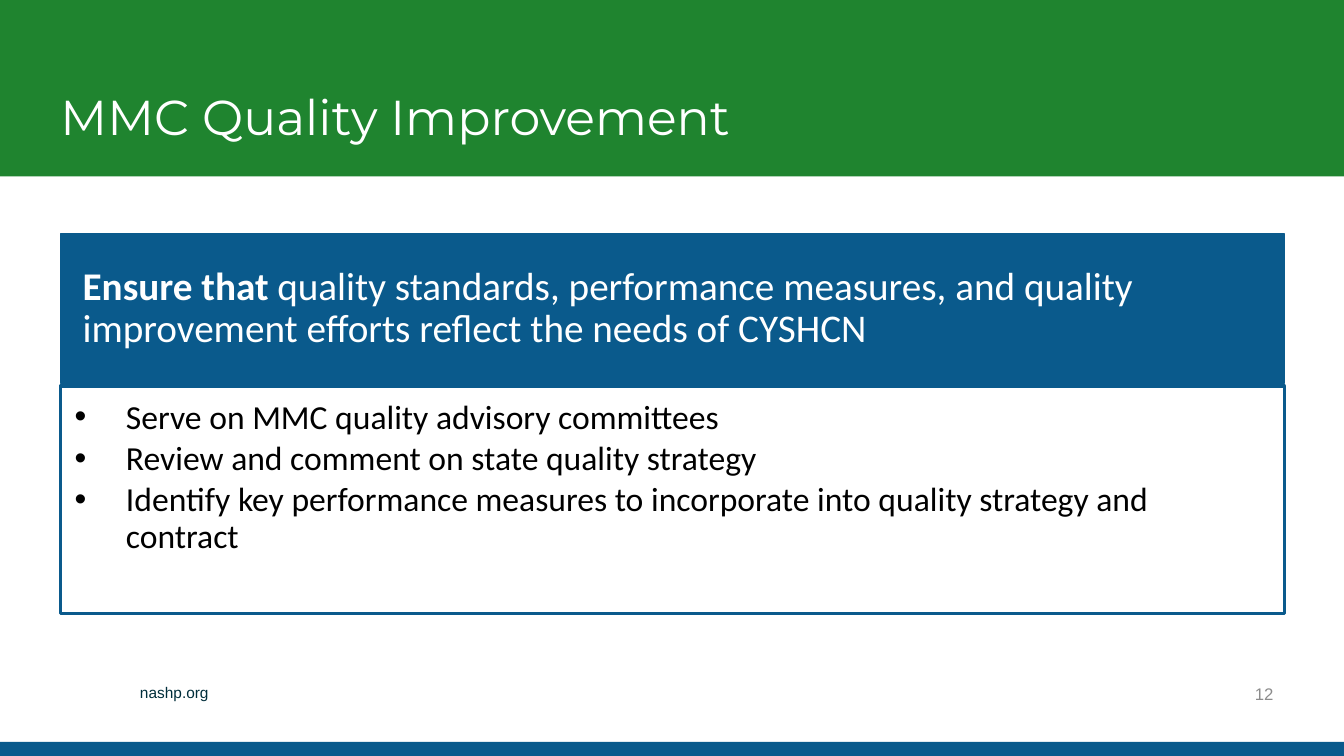
from lxml import etree
from pptx import Presentation
from pptx.dml.color import RGBColor
from pptx.enum.shapes import MSO_SHAPE as Shape
from pptx.enum.text import MSO_ANCHOR as Anchor, PP_ALIGN as Align
from pptx.oxml.ns import qn
from pptx.util import Inches, Pt

COLORS = {
    "green": "1F842F",
    "blue": "0A5A8C",
    "white": "FFFFFF",
    "black": "000000",
    "site": "002E3B",
    "number": "8C8C8C",
}
SLIDE_WIDTH, SLIDE_HEIGHT = 13.33, 7.5
MARGIN, CONTENT_WIDTH = 0.6, 12.14
BULLET_INDENT = 0.51
ACTIONS = [
    "Serve on MMC quality advisory committees",
    "Review and comment on state quality strategy",
    "Identify key performance measures to incorporate into quality strategy and contract",
]


def color(name):
    return RGBColor.from_string(COLORS[name])


def add_panel(slide, box, fill=None, line=None, line_width=1):
    panel = slide.shapes.add_shape(Shape.RECTANGLE, *map(Inches, box))
    panel.shadow.inherit = False
    if fill:
        panel.fill.solid()
        panel.fill.fore_color.rgb = color(fill)
    else:
        panel.fill.background()
    if line:
        panel.line.color.rgb = color(line)
        panel.line.width = Pt(line_width)
    else:
        panel.line.fill.background()
    return panel


def set_frame(shape, anchor=Anchor.TOP, insets=(0.1, 0.05, 0.1, 0.05)):
    """Prepare a wrapped text frame; insets run left, top, right, bottom."""
    frame = shape.text_frame
    frame.word_wrap = True
    frame.vertical_anchor = anchor
    (frame.margin_left, frame.margin_top,
     frame.margin_right, frame.margin_bottom) = map(Inches, insets)
    return frame


def add_run(paragraph, text, size, tint, font="Calibri", bold=False):
    run = paragraph.add_run()
    run.text = text
    run.font.size = Pt(size)
    run.font.name = font
    run.font.bold = bold
    run.font.color.rgb = color(tint)


def add_bullet(paragraph):
    properties = paragraph._p.get_or_add_pPr()
    properties.set("marL", str(Inches(BULLET_INDENT)))
    properties.set("indent", str(-Inches(BULLET_INDENT)))
    etree.SubElement(properties, qn("a:buFont")).set("typeface", "Arial")
    etree.SubElement(properties, qn("a:buChar")).set("char", "•")


def add_header(slide, box):
    left, top, width, height = box
    add_panel(slide, box, fill="green")
    title_box = (left + MARGIN, top + 0.22, CONTENT_WIDTH, height - 0.47)
    title = slide.shapes.add_textbox(*map(Inches, title_box))
    paragraph = set_frame(title, Anchor.BOTTOM, (0, 0.05, 0.1, 0.05)).paragraphs[0]
    paragraph.line_spacing = 0.9
    add_run(paragraph, "MMC Quality Improvement", 35, "white", "Montserrat")


def add_recommendation(slide, box):
    """Place the goal banner above the outlined list of actions."""
    left, top, width, height = box
    goal_height, gap = 1.48, 0.03
    goal = add_panel(slide, (left, top, width, goal_height), "blue", "blue")
    paragraph = set_frame(goal, Anchor.MIDDLE, (0.22, 0.12, 0.22, 0.12)).paragraphs[0]
    paragraph.alignment = Align.LEFT
    paragraph.line_spacing = 0.9
    add_run(paragraph, "Ensure that ", 28, "white", bold=True)
    add_run(paragraph, "quality standards, performance measures, and quality "
            "improvement efforts reflect the needs of CYSHCN", 28, "white")

    offset = goal_height + gap
    actions = add_panel(slide, (left, top + offset, width, height - offset),
                        line="blue", line_width=2.25)
    frame = set_frame(actions, insets=(0.14, 0.14, 0.19, 0.21))
    for index, action in enumerate(ACTIONS):
        paragraph = frame.add_paragraph() if index else frame.paragraphs[0]
        paragraph.level = 1
        paragraph.alignment = Align.LEFT
        paragraph.line_spacing = 0.9
        paragraph.space_after = Pt(3.6)
        add_bullet(paragraph)
        add_run(paragraph, action, 24, "black")


def add_footer(slide, box):
    left, top, width, height = box
    stripe_height = 0.14
    add_panel(slide, (left, top + height - stripe_height, width, stripe_height), fill="blue")
    site = slide.shapes.add_textbox(*map(Inches, (left + 1.29, top + 0.05, 6.27, 0.29)))
    add_run(set_frame(site).paragraphs[0], "nashp.org", 11, "site", "Arial")
    number = slide.shapes.add_textbox(*map(Inches, (left + 9.67, top, 3.06, 0.4)))
    paragraph = set_frame(number, Anchor.MIDDLE).paragraphs[0]
    paragraph.alignment = Align.RIGHT
    add_run(paragraph, "12", 12, "number", "Arial")


def main():
    deck = Presentation()
    deck.slide_width, deck.slide_height = Inches(SLIDE_WIDTH), Inches(SLIDE_HEIGHT)
    slide = deck.slides.add_slide(deck.slide_layouts[6])
    add_header(slide, (0, 0, SLIDE_WIDTH, 1.75))
    add_recommendation(slide, (MARGIN, 2.32, CONTENT_WIDTH, 3.77))
    add_footer(slide, (0, 6.68, SLIDE_WIDTH, SLIDE_HEIGHT - 6.68))
    deck.save("out.pptx")


if __name__ == "__main__":
    main()
